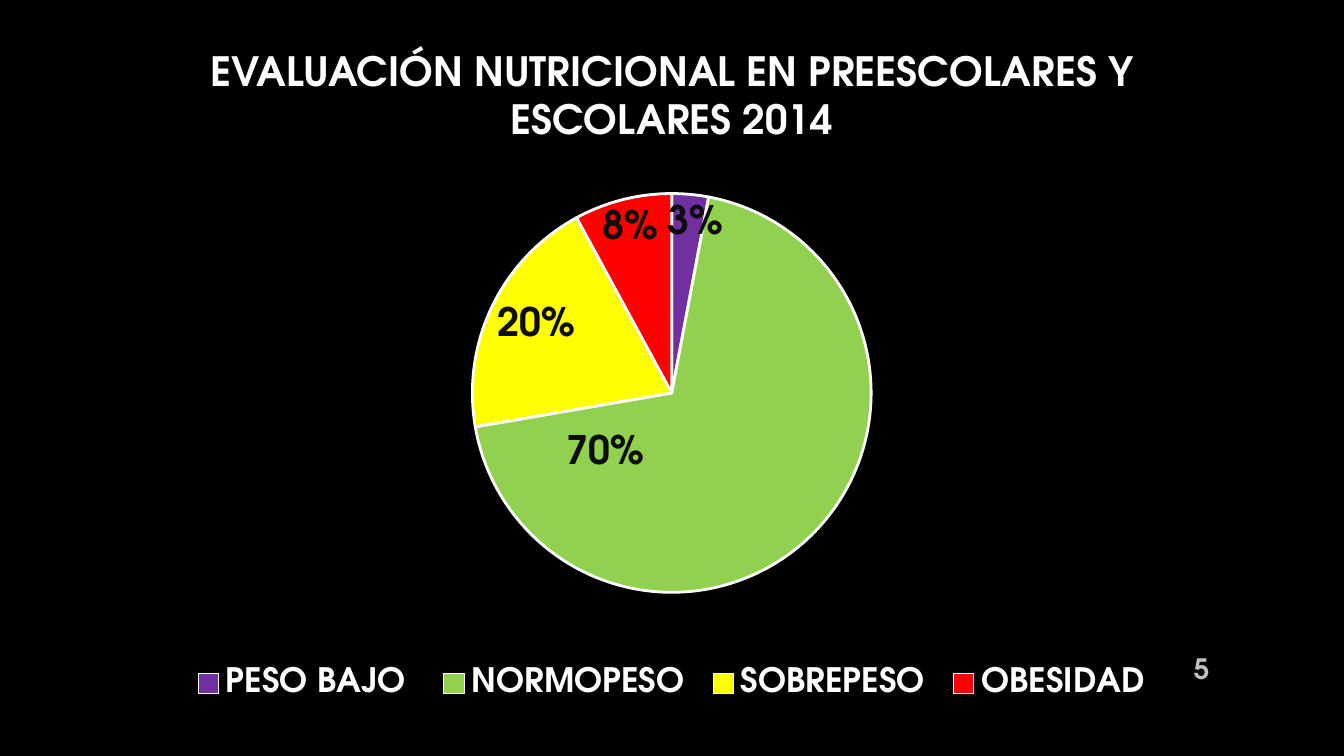
import pptx
import pptx.chart.data
import pptx.dml.color
import pptx.enum.chart
import pptx.enum.text
import pptx.oxml
import pptx.oxml.ns
import pptx.util

Cm = pptx.util.Cm
Pt = pptx.util.Pt
qn = pptx.oxml.ns.qn
PP_ALIGN = pptx.enum.text.PP_ALIGN

FONT = "TeX Gyre Adventor"
TITLE = "EVALUACIÓN NUTRICIONAL EN PREESCOLARES Y ESCOLARES 2014"
PAGE_NUMBER = "5"
GROUPS = [
    ("PESO BAJO ", 3, "7030A0"),
    ("NORMOPESO", 70, "92D050"),
    ("SOBREPESO", 20, "FFFF00"),
    ("OBESIDAD", 8, "FF0000"),
]
PERCENT_FORMAT = '0"%"'
LABEL_SHIFTS = {0: (0.03, 0.01), 1: (-0.15, -0.1), 3: (-0.02, 0.01)}
PLOT_AREA = {"x": 0.02, "y": 0.1, "w": 0.96, "h": 0.68}
LEGEND_AREA = {"x": 0.05, "y": 0.89, "w": 0.9, "h": 0.09}


def color(value):
    return pptx.dml.color.RGBColor.from_string(value)


def style_font(font, size, value):
    font.name = FONT
    font.size = Pt(size)
    font.bold = True
    font.color.rgb = color(value)


def add_text(slide, box, text, size, value, alignment):
    shape = slide.shapes.add_textbox(*(Cm(length) for length in box))
    frame = shape.text_frame
    frame.word_wrap = True
    frame.vertical_anchor = pptx.enum.text.MSO_ANCHOR.MIDDLE
    paragraph = frame.paragraphs[0]
    paragraph.text = text
    paragraph.alignment = alignment
    style_font(paragraph.font, size, value)


def manual_layout(settings):
    entries = "".join(f'<c:{name} val="{value}"/>' for name, value in settings.items())
    namespace = pptx.oxml.ns.nsdecls("c")
    return pptx.oxml.parse_xml(
        f"<c:layout {namespace}><c:manualLayout>{entries}</c:manualLayout></c:layout>")


def add_labels(series):
    inside_end = pptx.enum.chart.XL_LABEL_POSITION.INSIDE_END
    labels = series.data_labels
    labels.show_value = True
    labels.show_percentage = False
    labels.number_format = PERCENT_FORMAT
    labels.number_format_is_linked = False
    labels.position = inside_end
    style_font(labels.font, 28, "0D0D0D")
    for index in LABEL_SHIFTS:
        label = series.points[index].data_label
        label.position = inside_end
        style_font(label.font, 28, "0D0D0D")
    number_format = labels._element.find(qn("c:numFmt"))
    for element in series._element.iter(qn("c:dLbl")):
        position = element.find(qn("c:idx"))
        shift_x, shift_y = LABEL_SHIFTS[position.val]
        layout = manual_layout({"x": shift_x, "y": shift_y})
        position.addnext(layout)
        layout.addnext(pptx.oxml.parse_xml(pptx.oxml.xmlchemy.serialize_for_reading(number_format)))


def add_pie(slide, box):
    names, values, colors = zip(*GROUPS)
    data = pptx.chart.data.CategoryChartData(number_format=PERCENT_FORMAT)
    data.categories = names
    data.add_series("Series 1", values)
    chart = slide.shapes.add_chart(
        pptx.enum.chart.XL_CHART_TYPE.PIE, *(Cm(length) for length in box), data).chart
    chart.has_title = False
    chart.font.name = FONT
    chart.font.size = Pt(10)
    chart.font.color.rgb = color("FFFFFF")
    chart.has_legend = True
    chart.legend.position = pptx.enum.chart.XL_LEGEND_POSITION.BOTTOM
    chart.legend.include_in_layout = False
    style_font(chart.legend.font, 24, "FFFFFF")

    plot = chart.plots[0]
    plot.vary_by_categories = True
    series = plot.series[0]
    for index, value in enumerate(colors):
        point_format = series.points[index].format
        point_format.fill.solid()
        point_format.fill.fore_color.rgb = color(value)
        point_format.line.color.rgb = color("FFFFFF")
        point_format.line.width = Pt(2)
    add_labels(series)

    edges = {"xMode": "edge", "yMode": "edge"}
    plot_area = plot._element.getparent()
    legend = chart.legend._element
    for parent in (plot_area, legend):
        for layout in parent.findall(qn("c:layout")):
            parent.remove(layout)
    plot_area.insert(0, manual_layout({"layoutTarget": "inner", **edges, **PLOT_AREA}))
    legend.find(qn("c:legendPos")).addnext(manual_layout({**edges, **LEGEND_AREA}))


def main():
    presentation = pptx.Presentation()
    presentation.slide_width = Cm(33.87)
    presentation.slide_height = Cm(19.05)
    slide = presentation.slides.add_slide(presentation.slide_layouts[6])
    slide.background.fill.solid()
    slide.background.fill.fore_color.rgb = color("000000")
    add_text(slide, (3.18, 1.7, 27.5, 1.37), TITLE, 28.8, "FFFFFF", PP_ALIGN.CENTER)
    add_pie(slide, (3.18, 3.4, 27.5, 14.78))
    add_text(slide, (29.21, 16.33, 1.52, 1.02), PAGE_NUMBER, 20, "BFBFBF", PP_ALIGN.RIGHT)
    presentation.save("out.pptx")


if __name__ == "__main__":
    main()
